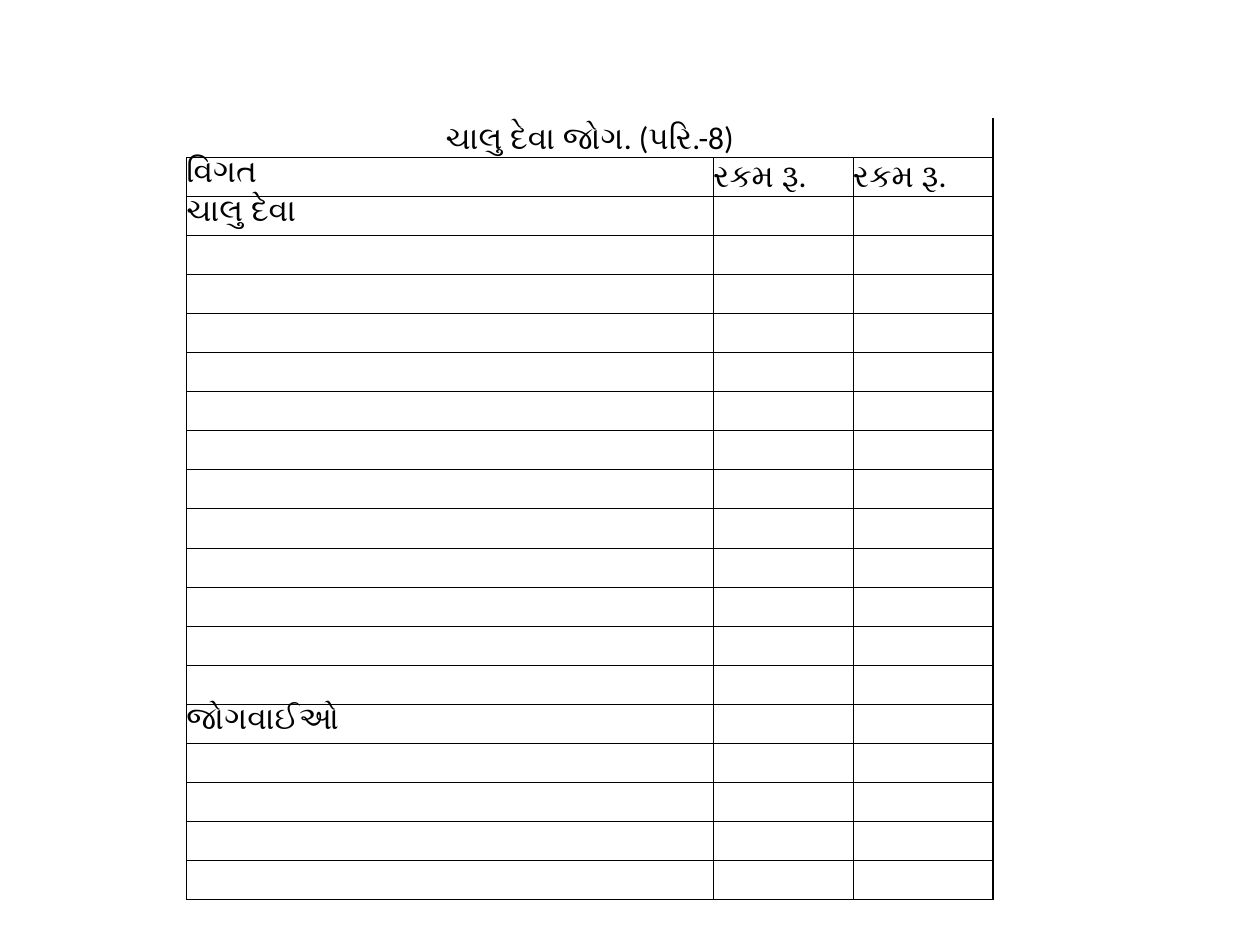
from lxml import etree
from pptx import Presentation
from pptx.dml.color import RGBColor
from pptx.enum import text
from pptx.oxml.ns import qn
from pptx.util import Inches, Pt

BLACK = RGBColor(0, 0, 0)
FONT = "Calibri"
THIN, THICK = Pt(0.5), Pt(1)

# Content: row number -> texts, all other rows stay open for entries
TITLE = "ચાલુ દેવા જોગ. (પરિ.-8)"
ROW_TEXTS = {
    0: [TITLE],
    1: ["વિગત", "રકમ રૂ.", "રકમ રૂ."],
    2: ["ચાલુ દેવા"],
    15: ["જોગવાઈઓ"],
}
ROW_COUNT = 20
ROW_HEIGHT = Inches(0.31)
COLUMN_WIDTHS = [Inches(4.18), Inches(1.11), Inches(1.11)]
LEFT, TOP = Inches(1.48), Inches(0.94)


def set_borders(cell, widths):
    """Draw the sides in widths; a width of None leaves that side open."""
    properties = cell._tc.get_or_add_tcPr()
    for position, (side, width) in enumerate(widths.items()):
        line = etree.Element(qn("a:ln" + side))
        properties.insert(position, line)
        if width is None:
            etree.SubElement(line, qn("a:noFill"))
            continue
        line.set("w", str(width))
        fill = etree.SubElement(line, qn("a:solidFill"))
        etree.SubElement(fill, qn("a:srgbClr"), val=str(BLACK))


def format_cell(cell, content, is_title):
    cell.margin_left = cell.margin_right = 0
    cell.margin_top = cell.margin_bottom = 0
    cell.fill.background()
    cell.text = content
    paragraph = cell.text_frame.paragraphs[0]
    paragraph.font.name = FONT
    paragraph.font.size = Pt(18)
    paragraph.font.color.rgb = BLACK
    if is_title:
        cell.vertical_anchor = text.MSO_ANCHOR.BOTTOM
        paragraph.alignment = text.PP_ALIGN.CENTER


prs = Presentation()
prs.slide_width, prs.slide_height = Inches(10), Inches(7.5)
slide = prs.slides.add_slide(prs.slide_layouts[6])

# Schedule grid
schedule = slide.shapes.add_table(
    ROW_COUNT, len(COLUMN_WIDTHS), LEFT, TOP,
    sum(COLUMN_WIDTHS), ROW_HEIGHT * ROW_COUNT).table
schedule.first_row = schedule.horz_banding = False
for column, width in zip(schedule.columns, COLUMN_WIDTHS):
    column.width = width
for row in schedule.rows:
    row.height = ROW_HEIGHT
schedule.cell(0, 0).merge(schedule.cell(0, len(COLUMN_WIDTHS) - 1))

# Texts and borders: open title row, heavier right edge
last_column = len(COLUMN_WIDTHS) - 1
for r in range(ROW_COUNT):
    texts = ROW_TEXTS.get(r, [])
    is_title = r == 0
    inner = None if is_title else THIN
    for c in range(len(COLUMN_WIDTHS)):
        cell = schedule.cell(r, c)
        format_cell(cell, texts[c] if c < len(texts) else "", is_title)
        at_edge = c == last_column or cell.is_merge_origin
        set_borders(cell, {"L": inner, "R": THICK if at_edge else inner,
                           "T": inner, "B": THIN})

prs.save("out.pptx")
